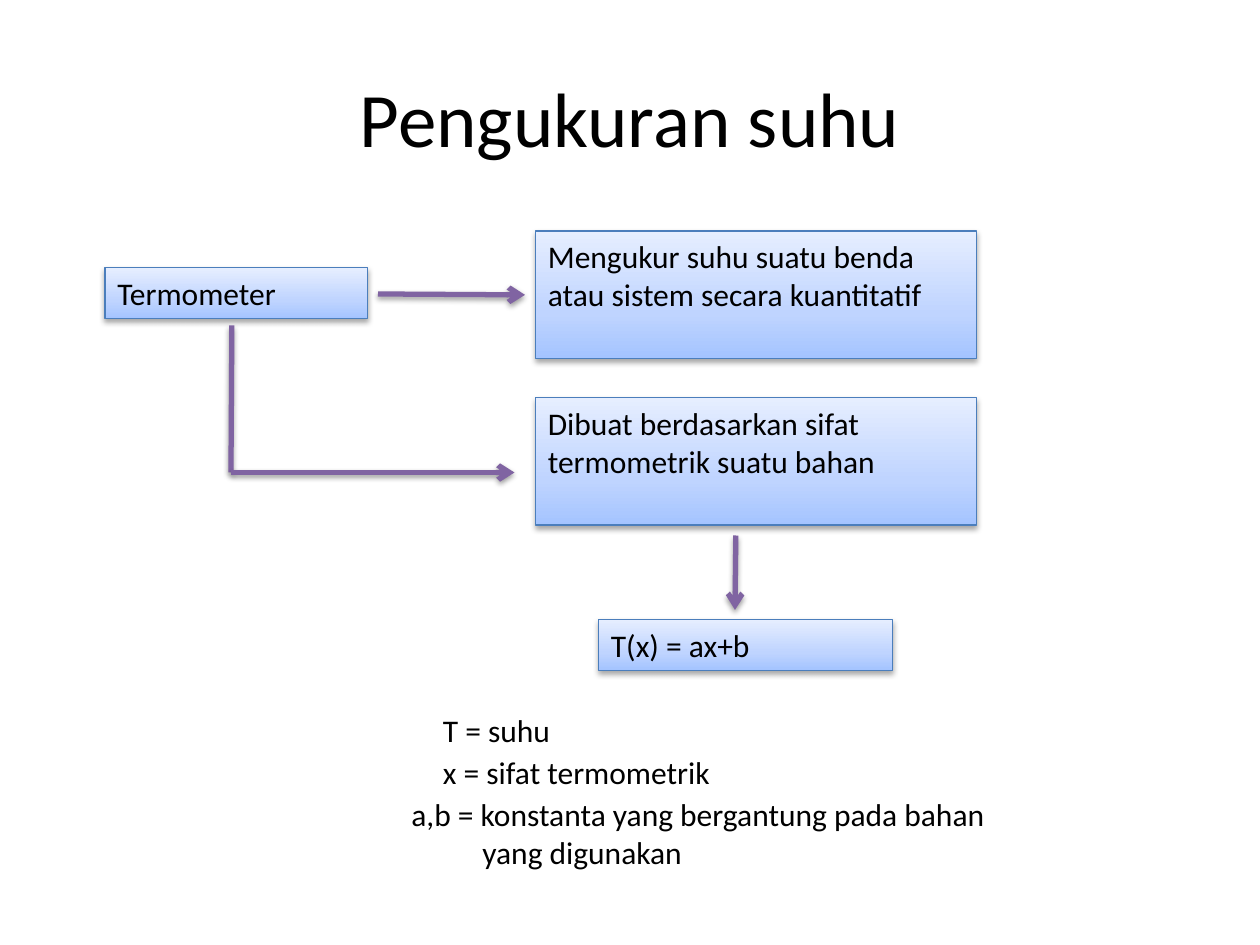
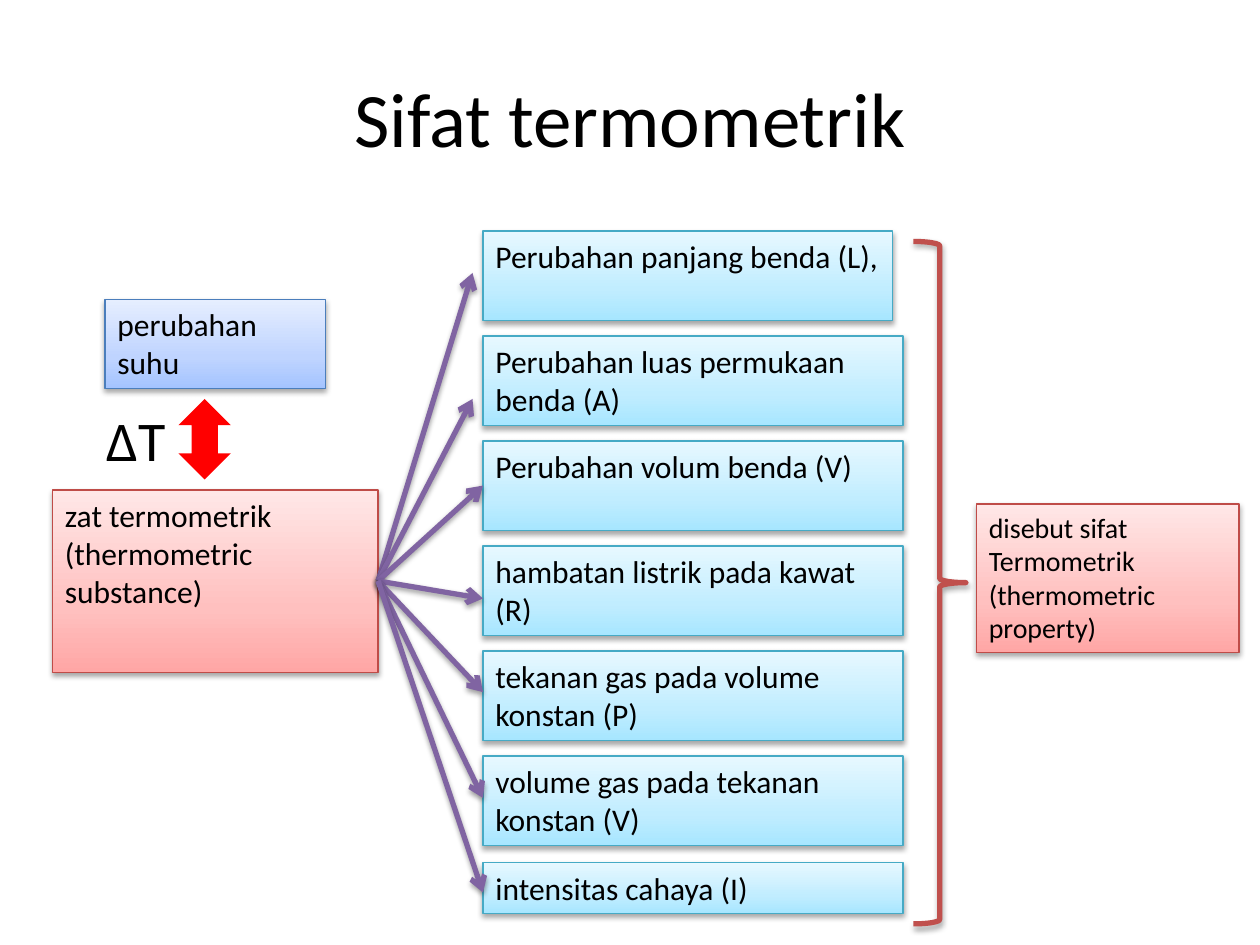
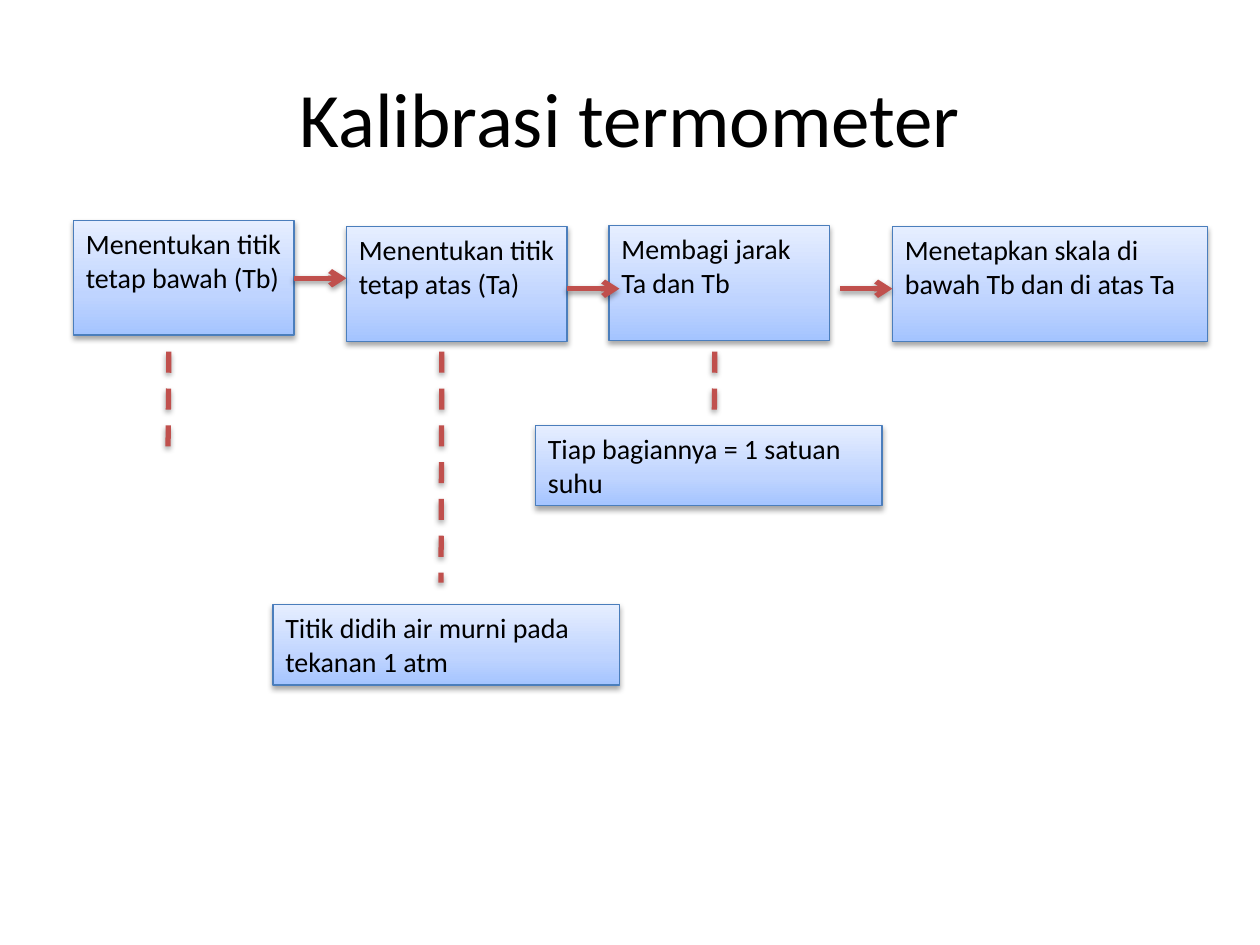
from copy import deepcopy

from lxml import etree
from pptx import Presentation
from pptx.dml.color import RGBColor
from pptx.enum.dml import MSO_LINE
from pptx.enum.shapes import MSO_CONNECTOR, MSO_SHAPE
from pptx.enum.text import MSO_ANCHOR, PP_ALIGN
from pptx.oxml.ns import qn
from pptx.util import Pt

RECT = MSO_SHAPE.RECTANGLE
BRACE = MSO_SHAPE.RIGHT_BRACE
UPDOWN = MSO_SHAPE.UP_DOWN_ARROW
STRAIGHT = MSO_CONNECTOR.STRAIGHT
DASH = MSO_LINE.DASH
TOP = MSO_ANCHOR.TOP
LEFT = PP_ALIGN.LEFT

FONT = "Calibri"
color = RGBColor.from_string
BLACK = "000000"
PURPLE = "8064A2"
BRICK = "C0504D"
RED = "FF0000"

# Each tone: outline, then gradient from bottom to top
STOPS = (0, 0.35, 1)
BLUE = ("4B7EBC", "A4C4FF", "BFD4FF", "E6EEFF")
PINK = ("BF4C48", "FFA6A5", "FFC0BF", "FFE7E7")
AQUA = ("46AAC5", "A7E6FF", "C1EDFF", "E7F8FF")


def label(slide, text, x, y, w, h, tone=None, size=18):
    """Add left-aligned text, in a gradient box when a tone is given."""
    place = Pt(x), Pt(y), Pt(w), Pt(h)
    if tone:
        shape = slide.shapes.add_shape(RECT, *place)
        shape.line.color.rgb = color(tone[0])
        shape.line.width = Pt(0.75)
        shape.fill.gradient()
        shape.fill.gradient_angle = 90
        stops = shape._element.spPr.find(qn("a:gradFill")).find(qn("a:gsLst"))
        stops.insert(1, deepcopy(stops[0]))
        for stop, spot, tint in zip(shape.fill.gradient_stops, STOPS, tone[1:]):
            stop.position = spot
            stop.color.rgb = color(tint)
    else:
        shape = slide.shapes.add_textbox(*place)
    frame = shape.text_frame
    frame.word_wrap = True
    frame.vertical_anchor = TOP
    frame.text = text
    for par in frame.paragraphs:
        par.alignment = LEFT
        par.font.name = FONT
        par.font.size = Pt(size)
        par.font.color.rgb = color(BLACK)
    return shape


def link(slide, x1, y1, x2, y2, tint, head=True, dash=None):
    line = slide.shapes.add_connector(STRAIGHT, Pt(x1), Pt(y1), Pt(x2), Pt(y2))
    line.line.color.rgb = color(tint)
    line.line.width = Pt(3)
    if dash:
        line.line.dash_style = dash
    if head:
        edge = line._element.spPr.find(qn("a:ln"))
        etree.SubElement(edge, qn("a:tailEnd"), type="arrow")


prs = Presentation()
prs.slide_width, prs.slide_height = Pt(720), Pt(540)

slides = []
for title in ("Pengukuran suhu", "Sifat termometrik", "Kalibrasi termometer"):
    slide = prs.slides.add_slide(prs.slide_layouts[5])
    slide.shapes.title.text = title
    font = slide.shapes.title.text_frame.paragraphs[0].runs[0].font
    font.name, font.size, font.color.rgb = FONT, Pt(44), color(BLACK)
    slides.append(slide)
measure, traits, scale = slides

# Measuring temperature
for text, x, y, w, h in (
    ("Termometer", 60, 153, 150, 29),
    ("Mengukur suhu suatu benda atau sistem secara kuantitatif", 306, 132, 252, 72.7),
    ("Dibuat berdasarkan sifat termometrik suatu bahan", 306, 227.3, 252, 72.7),
    ("T(x) = ax+b", 342, 354, 168, 29),
):
    label(measure, text, x, y, w, h, BLUE)

link(measure, 216, 168, 300, 168.5, PURPLE)
link(measure, 132, 270, 132.5, 186, PURPLE, head=False)
link(measure, 132, 270, 294, 270, PURPLE)
link(measure, 420.5, 306, 420, 348.5, PURPLE)

label(measure, "T = suhu", 246, 403, 108, 29)
label(measure, "x = sifat termometrik", 246, 426.5, 300, 29)
note = label(measure, "a,b = konstanta yang bergantung pada bahan\nyang digunakan",
             228, 451, 480, 51)
note.text_frame.paragraphs[1]._p.get_or_add_pPr().set("marL", str(Pt(40.6)))

# Thermometric properties
label(traits, "perubahan suhu", 60, 171, 126, 51, BLUE)
label(traits, "zat termometrik (thermometric substance)", 30, 280, 186, 104.4, PINK)
swap = traits.shapes.add_shape(UPDOWN, Pt(102), Pt(228), Pt(30), Pt(46))
swap.shadow.inherit = False
swap.fill.solid()
swap.fill.fore_color.rgb = color(RED)
swap.line.fill.background()
label(traits, "ΔT", 54, 228, 54, 46, size=32)

for i, (text, w, tip_x, tip_y) in enumerate((
    ("Perubahan panjang benda (L),", 234, 270, 156),
    ("Perubahan luas permukaan benda (A)", 240, 270, 228),
    ("Perubahan volum benda (V)", 240, 276, 277.5),
    ("hambatan listrik pada kawat (R)", 240, 276, 342),
    ("tekanan gas pada volume konstan (P)", 240, 276, 395.5),
    ("volume gas pada tekanan konstan (V)", 240, 276, 456),
)):
    label(traits, text, 276, 132 + 60 * i, w, 51, AQUA)
    link(traits, 216, 332, tip_x, tip_y, PURPLE)
label(traits, "intensitas cahaya (I)", 276, 493, 240, 29, AQUA)
link(traits, 216, 332, 276, 510, PURPLE)

brace = traits.shapes.add_shape(BRACE, Pt(522), Pt(138), Pt(30), Pt(390))
brace.fill.background()
brace.line.color.rgb = color(BRICK)
brace.line.width = Pt(3)
label(traits, "disebut sifat Termometrik\n(thermometric property)",
      558, 288, 150, 85, PINK, 16)

# Calibrating a thermometer
for text, x, y, w, h in (
    ("Menentukan titik tetap bawah (Tb)", 42, 126, 126, 65.5),
    ("Menentukan titik tetap atas (Ta)", 198, 129.5, 126, 65.5),
    ("Membagi jarak Ta dan Tb", 348, 129, 126, 65.5),
    ("Menetapkan skala di bawah Tb dan di atas Ta", 510, 129.5, 180, 65.5),
):
    label(scale, text, x, y, w, h, BLUE, 16)

for x, y in ((168, 159), (324, 165), (480, 165)):
    link(scale, x, y, x + 30, y, BRICK)
for x, end in ((96, 261), (252, 333), (408, 261)):
    link(scale, x + 0.5, 201, x, end, BRICK, head=False, dash=DASH)

label(scale, "Titik didih air murni pada tekanan 1 atm", 156, 345.5, 198, 46, BLUE, 16)
label(scale, "Tiap bagiannya = 1 satuan suhu", 306, 243, 198, 46, BLUE, 16)

prs.save("out.pptx")
